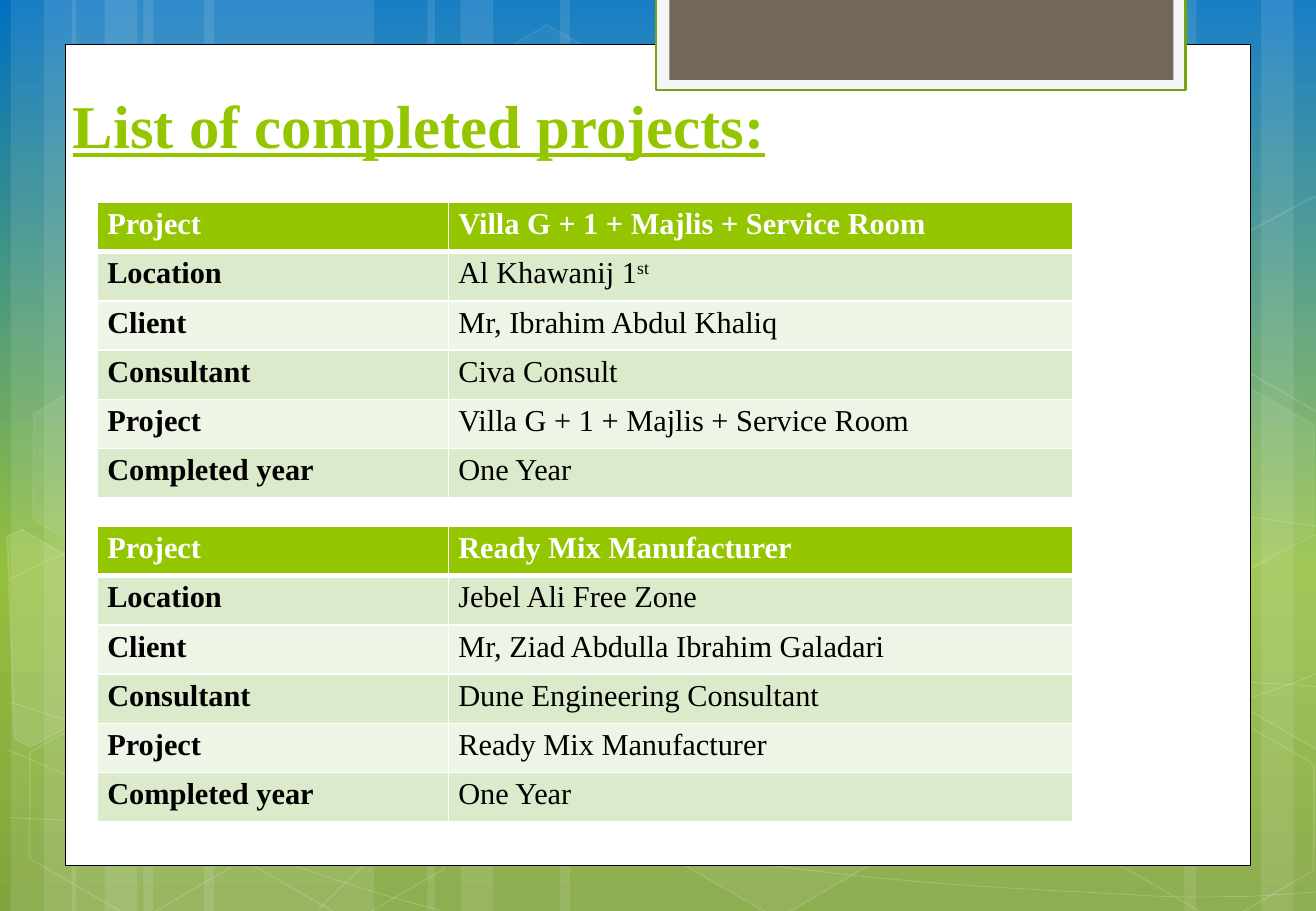
import copy
import dataclasses
from typing import Optional

import pptx
import pptx.dml.color
import pptx.dml.fill
import pptx.enum.shapes
import pptx.enum.text
import pptx.oxml
import pptx.oxml.ns
import pptx.shapes.autoshape
import pptx.slide
import pptx.table
import pptx.util

Pt = pptx.util.Pt
RGB = pptx.dml.color.RGBColor
KIND = pptx.enum.shapes.MSO_SHAPE
Shape = pptx.shapes.autoshape.Shape
Point = tuple[float, float]

WHITE = RGB(0xFF, 0xFF, 0xFF)
BLACK = RGB(0, 0, 0)
GREEN = RGB(0x94, 0xC6, 0x00)
MOSS = RGB(0x74, 0xA5, 0x10)
BROWN = RGB(0x71, 0x68, 0x5A)
PALE = RGB(0xF5, 0xF5, 0xF5)
BANDS = (RGB(0xDC, 0xEA, 0xCC), RGB(0xEE, 0xF5, 0xE7))
SKY = ((0, RGB(0x00, 0x70, 0xC0)), (0.62, RGB(0x93, 0xBF, 0x3F)), (1, RGB(0x81, 0xA5, 0x3E)))
FONT = "Times New Roman"


@dataclasses.dataclass
class Look:
    fill: Optional[RGB] = None
    clear: float = 100  # fill opacity in percent
    line: Optional[RGB] = None
    width: float = 1
    faint: float = 100  # line opacity in percent


@dataclasses.dataclass
class Box:
    left: float
    top: float
    width: float
    height: float
    look: Look
    kind: KIND = KIND.RECTANGLE


@dataclasses.dataclass
class Trace:
    points: list[Point]
    look: Look
    curve: bool = False


@dataclasses.dataclass
class Job:
    top: float
    facts: list[str]


def glass(fill: float, line: float) -> Look:
    """White see-through look; a fill of 0 means none."""
    return Look(WHITE if fill else None, fill, WHITE, 1, line)


def hexa(left: float, top: float, fill: float, line: float) -> Box:
    return Box(left, top, 136.8, 109.4, glass(fill, line), KIND.HEXAGON)


WIDE, THIN, MID = 136.8, 38.9, 64.8
STRIPES = [Box(x, 0, w, 540, Look(WHITE, 10)) for x, w in (
    (85, WIDE), (6.5, THIN), (26, MID), (121, WIDE), (42.5, THIN), (62, MID),
    (572.4, WIDE), (747.4, THIN), (702, MID), (332, 240.5), (253.4, THIN), (273, MID))]

THREAD = Look(line=WHITE, width=0.5, faint=20)
CURVES = [Trace(points, THREAD, True) for points in (
    [(6, 484.6), (47.5, 486.7), (90, 488.9), (148.3, 488.2), (207.4, 487.4), (278.6, 486),
     (357.1, 478.8), (435.6, 471.6), (545.8, 457.9), (617.8, 444.2), (689, 430.6),
     (761.8, 409), (785.5, 396.7)],
    [(6, 343.4), (28, 332), (50.4, 321), (95, 310.3), (139, 299.5), (201.6, 283.7),
     (270.7, 278.6), (340.6, 273.6), (424, 272.9), (509.8, 278.6), (596, 284.4),
     (738.7, 306.7), (785.5, 312.5)],
    [(4.3, 444.2), (94.3, 483.8), (193, 523.4), (260.6, 539.3)],
    [(6, 416.2), (30.2, 424.1), (54.7, 432), (100, 443.5), (145.4, 454.3), (213, 472.3),
     (278, 484.6), (343.4, 496.8), (425.5, 509.8), (489.6, 517), (554.4, 524.9),
     (623.5, 527.8), (665.3, 530), (706.3, 532.8), (717, 531.4), (737.3, 531.4),
     (756.7, 530.6), (771, 529.2), (785.5, 528.5)],
    [(188.6, 539.3), (203, 524.9), (216.7, 510.5), (235.4, 497.5), (254.2, 484.6),
     (280.8, 470.2), (302.4, 460), (324, 450), (337.7, 445.7), (366.5, 438.5),
     (395.3, 431.3), (447, 421.2), (474.5, 416.2), (501.8, 411), (506, 411),
     (530.6, 409.7), (554.4, 407.5), (592.6, 405.4), (619.2, 404.6), (645.8, 404),
     (691.2, 404.6), (691.2, 404.6), (708, 404.6), (726, 404.6), (743, 404.6),
     (757.4, 405.4), (770.4, 406), (777.6, 406.8), (784, 407.5), (782, 406.8),
     (784.8, 407.5)])]

CELLS = [
    hexa(260.6, 26, 4, 8),
    hexa(387.4, 424, 6, 12),
    Trace([(4.3, 318.2), (13, 313.9), (72.7, 348.5), (74.2, 412.6), (18, 442.8),
           (8.6, 437.8)], glass(10, 12)),
    hexa(8.6, 425.5, 0, 12),
    hexa(10.8, 224.6, 7, 8),
    hexa(135.4, 426.2, 0, 12),
    hexa(587.5, 326.2, 10, 12),
    hexa(650.9, 427, 0, 12),
    hexa(650.9, 226, 7, 8),
    Trace([(722.2, 347.8), (779, 316.8), (784.8, 320.4), (789.1, 443.5), (784, 446.4),
           (724.3, 411.8)], glass(4, 12)),
    Trace([(722.2, 146.9), (779, 116.6), (785.5, 120.2), (789.1, 243.4), (784, 246.2),
           (724.3, 211.7)], glass(0, 12))]

FRAME = [
    Box(38.9, 26.2, 702, 486.7, Look(WHITE, line=BLACK, width=0.5)),
    Box(388.8, -1.4, 313.9, 54.7, Look(PALE, line=MOSS, width=1.25)),
    Box(396.7, -1.4, 298.8, 48.8, Look(BROWN))]

LABELS = ["Project", "Location", "Client", "Consultant", "Project", "Completed year"]
JOBS = [
    Job(120, ["Villa G + 1 + Majlis + Service Room", "Al Khawanij 1^st",
              "Mr, Ibrahim Abdul Khaliq", "Civa Consult",
              "Villa G + 1 + Majlis + Service Room", "One Year"]),
    Job(312, ["Ready Mix Manufacturer", "Jebel Ali Free Zone",
              "Mr, Ziad Abdulla Ibrahim Galadari", "Dune Engineering Consultant",
              "Ready Mix Manufacturer", "One Year"])]


def assign(thing: object, values: dict) -> None:
    for name, value in values.items():
        setattr(thing, name, value)


def paint(fill: pptx.dml.fill.FillFormat, color: Optional[RGB], solid: float = 100) -> None:
    """Fill with a colour at an opacity in percent, or with none."""
    if color is None:
        fill.background()
        return
    fill.solid()
    fill.fore_color.rgb = color
    if solid < 100:
        tint = fill._xPr.find(pptx.oxml.ns.qn("a:solidFill"))[0]
        tint.append(pptx.oxml.parse_xml(
            f'<a:alpha {pptx.oxml.ns.nsdecls("a")} val="{solid * 1000}"/>'))


def dress(shape: Shape, look: Look) -> None:
    shape.shadow.inherit = False
    paint(shape.fill, look.fill, look.clear)
    paint(shape.line.fill, look.line, look.faint)
    if look.line is not None:
        shape.line.width = Pt(look.width)


def bend(shape: Shape) -> None:
    """Turn each three straight segments into one cubic curve."""
    legs = list(shape._element.iter(pptx.oxml.ns.qn("a:lnTo")))
    for i in range(0, len(legs), 3):
        arc = pptx.oxml.parse_xml(f'<a:cubicBezTo {pptx.oxml.ns.nsdecls("a")}/>')
        legs[i].addprevious(arc)
        for leg in legs[i:i + 3]:
            arc.append(leg[0])
            leg.getparent().remove(leg)


def draw(slide: pptx.slide.Slide, item: Box | Trace) -> None:
    if isinstance(item, Box):
        shape = slide.shapes.add_shape(item.kind, *map(
            Pt, (item.left, item.top, item.width, item.height)))
        if item.kind == KIND.HEXAGON:
            shape.rotation = 30
            shape.adjustments[0] = 0.285
    else:
        path = [(Pt(x), Pt(y)) for x, y in item.points]
        pen = slide.shapes.build_freeform(*path[0])
        pen.add_line_segments(path[1:], close=not item.curve)
        shape = pen.convert_to_shape()
        if item.curve:
            bend(shape)
    dress(shape, item.look)


def edge(cell: pptx.table._Cell, row: int) -> None:
    """White borders, with a thick rule under the header."""
    thick = {"T": 3 if row == 1 else 1, "B": 3 if row == 0 else 1}
    for i, side in enumerate("LRTB"):
        cell._tc.get_or_add_tcPr().insert(i, pptx.oxml.parse_xml(
            f'<a:ln{side} {pptx.oxml.ns.nsdecls("a")} w="{Pt(thick.get(side, 1))}">'
            f'<a:solidFill><a:srgbClr val="{WHITE}"/></a:solidFill></a:ln{side}>'))


def write(cell: pptx.table._Cell, text: str, row: int, bold: bool) -> None:
    """Fill in one cell; text after ^ is raised."""
    assign(cell, {"margin_left": Pt(6), "margin_right": Pt(6),
                  "margin_top": 0, "margin_bottom": 0})
    paint(cell.fill, BANDS[(row - 1) % 2] if row else GREEN)
    edge(cell, row)
    para = cell.text_frame.paragraphs[0]
    para.line_spacing = 1.15
    for i, part in enumerate(text.split("^")):
        run = para.add_run()
        run.text = part
        assign(run.font, {"name": FONT, "size": Pt(18), "bold": bold})
        run.font.color.rgb = BLACK if row else WHITE
        if i:
            run.font._element.set("baseline", "30000")


def tabulate(slide: pptx.slide.Slide, job: Job) -> None:
    grid = slide.shapes.add_table(len(LABELS), 2, Pt(57.6), Pt(job.top),
                                  Pt(578.2), Pt(175.2)).table
    grid.columns[0].width, grid.columns[1].width = Pt(208.1), Pt(370.1)
    for row, pair in enumerate(zip(LABELS, job.facts)):
        for col, text in enumerate(pair):
            write(grid.cell(row, col), text, row, row == 0 or col == 0)


def shade(slide: pptx.slide.Slide) -> None:
    fill = slide.background.fill
    fill.gradient()
    fill.gradient_angle = 270
    first = fill.gradient_stops[0]._gs
    first.addnext(copy.deepcopy(first))
    for stop, (place, color) in zip(fill.gradient_stops, SKY):
        stop.position = place
        stop.color.rgb = color


def head(slide: pptx.slide.Slide) -> None:
    title = slide.shapes.title
    slide.shapes._spTree.append(title._element)
    assign(title, {"left": Pt(36), "top": Pt(41.8), "width": Pt(599), "height": Pt(56.9)})
    frame = title.text_frame
    frame.text = "List of completed projects:"
    assign(frame, {"vertical_anchor": pptx.enum.text.MSO_ANCHOR.BOTTOM, "word_wrap": True})
    para = frame.paragraphs[0]
    para.alignment = pptx.enum.text.PP_ALIGN.LEFT
    font = para.runs[0].font
    assign(font, {"name": FONT, "size": Pt(36), "bold": True, "underline": True})
    font.color.rgb = GREEN


def main() -> None:
    deck = pptx.Presentation()
    assign(deck, {"slide_width": Pt(780), "slide_height": Pt(540)})
    slide = deck.slides.add_slide(deck.slide_layouts[5])
    shade(slide)
    for item in STRIPES + CURVES + CELLS + FRAME:
        draw(slide, item)
    head(slide)
    for job in JOBS:
        tabulate(slide, job)
    deck.save("out.pptx")


if __name__ == "__main__":
    main()
